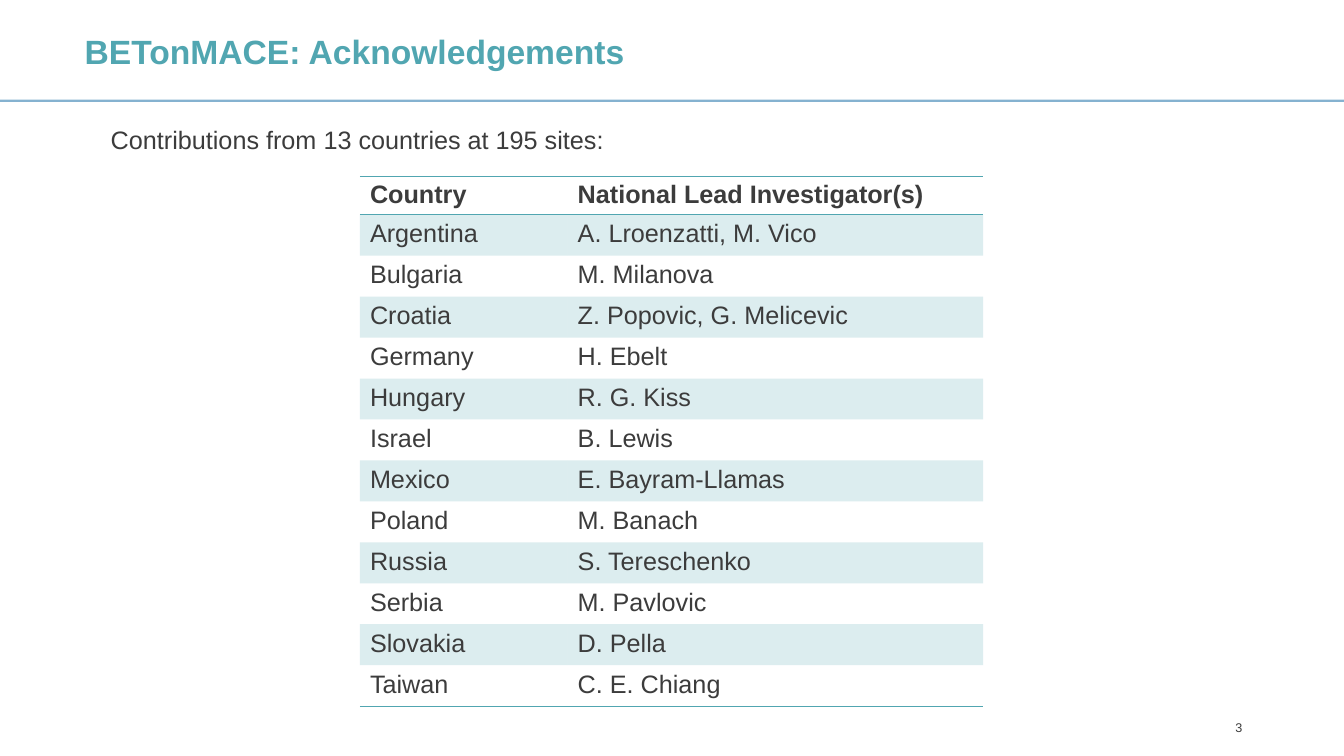
from lxml.etree import SubElement
from pptx import Presentation
from pptx.dml.color import RGBColor
from pptx.enum.shapes import MSO_CONNECTOR as Connector
from pptx.enum.text import MSO_ANCHOR as Anchor, PP_ALIGN as Align
from pptx.oxml.ns import qn
from pptx.util import Inches, Pt

FONT = "Arial"
TEAL = "51A6B1"
DARK = "3C3C3C"
BLUE = "0D67A2"
NO_TABLE_STYLE = "{2D5ABB26-0587-4C30-8999-92F81FD0307C}"

HEADINGS = ("Country", "National Lead Investigator(s)")
INVESTIGATORS = [
    ("Argentina", "A. Lroenzatti, M. Vico"),
    ("Bulgaria", "M. Milanova"),
    ("Croatia", "Z. Popovic, G. Melicevic"),
    ("Germany", "H. Ebelt"),
    ("Hungary", "R. G. Kiss"),
    ("Israel", "B. Lewis"),
    ("Mexico", "E. Bayram-Llamas"),
    ("Poland", "M. Banach"),
    ("Russia", "S. Tereschenko"),
    ("Serbia", "M. Pavlovic"),
    ("Slovakia", "D. Pella"),
    ("Taiwan", "C. E. Chiang"),
]


def set_color(color_format, color, opacity=100):
    color_format.rgb = RGBColor.from_string(color)
    if opacity < 100:
        element = color_format._xFill.find(qn("a:srgbClr"))
        SubElement(element, qn("a:alpha"), val=str(opacity * 1000))


def write(frame, text, size=18, color=DARK, bold=False, align=Align.LEFT,
          anchor=Anchor.TOP, wrap=True):
    frame.word_wrap = wrap
    frame.vertical_anchor = anchor
    paragraph = frame.paragraphs[0]
    paragraph.alignment = align
    run = paragraph.add_run()
    run.text = text
    run.font.name = FONT
    run.font.size = Pt(size)
    run.font.bold = bold
    set_color(run.font.color, color)


def place(shape, left, top, width, height):
    shape.left, shape.top = Inches(left), Inches(top)
    shape.width, shape.height = Inches(width), Inches(height)


def add_text(slide, text, left, top, width, height, **text_format):
    box = slide.shapes.add_textbox(
        Inches(left), Inches(top), Inches(width), Inches(height))
    write(box.text_frame, text, **text_format)


def add_rule(slide, left, right, top, color, width, opacity):
    rule = slide.shapes.add_connector(
        Connector.STRAIGHT, Inches(left), Inches(top), Inches(right), Inches(top))
    rule.line.width = Pt(width)
    rule.line.fill.solid()
    set_color(rule.line.fill.fore_color, color, opacity)
    SubElement(rule._element.spPr, qn("a:effectLst"))


def add_border(properties, side, color, width):
    line = SubElement(properties, qn(f"a:ln{side}"), w=str(Pt(width)))
    fill = SubElement(line, qn("a:solidFill"))
    SubElement(fill, qn("a:srgbClr"), val=color)


def format_cell(cell, text, row, last_row):
    is_header = row == 0
    cell.margin_top = cell.margin_bottom = Inches(0.04 if is_header else 0.05)
    write(cell.text_frame, text, bold=is_header)
    properties = cell._tc.get_or_add_tcPr()
    if is_header:
        add_border(properties, "T", TEAL, 1)
    if row in (0, last_row):
        add_border(properties, "B", TEAL, 1)
    if row % 2:
        cell.fill.solid()
        set_color(cell.fill.fore_color, TEAL, 20)
    else:
        cell.fill.background()


def add_investigator_table(slide, left, top, column_widths, header_height, height):
    rows = [HEADINGS, *INVESTIGATORS]
    frame = slide.shapes.add_table(
        len(rows), len(HEADINGS), Inches(left), Inches(top),
        Inches(sum(column_widths)), Inches(height))
    table = frame.table
    table.first_row = table.horz_banding = False
    table._tbl.tblPr.find(qn("a:tableStyleId")).text = NO_TABLE_STYLE
    for column, width in zip(table.columns, column_widths):
        column.width = Inches(width)
    body_height = (height - header_height) / len(INVESTIGATORS)
    for index, texts in enumerate(rows):
        table.rows[index].height = Inches(body_height if index else header_height)
        for column, text in enumerate(texts):
            format_cell(table.cell(index, column), text, index, len(INVESTIGATORS))


def main():
    presentation = Presentation()
    presentation.slide_width = Inches(13.33)
    presentation.slide_height = Inches(7.5)
    slide = presentation.slides.add_slide(presentation.slide_layouts[5])

    add_rule(slide, 0, 13.33, 1, BLUE, 1.5, 50)
    title = slide.shapes.title
    place(title, 0.74, 0.26, 10.43, 0.73)
    write(title.text_frame, "BETonMACE: Acknowledgements",
          size=24, color=TEAL, bold=True)
    add_text(slide, "3", 9.42, 7.08, 3, 0.27,
             size=9, align=Align.RIGHT, anchor=Anchor.MIDDLE)
    add_investigator_table(slide, 3.57, 1.75, (2.06, 4.12), 0.37, 5.25)
    add_text(slide, "Contributions from 13 countries at 195 sites:",
             1, 1.18, 5.14, 0.4, wrap=False)

    presentation.save("out.pptx")


if __name__ == "__main__":
    main()
